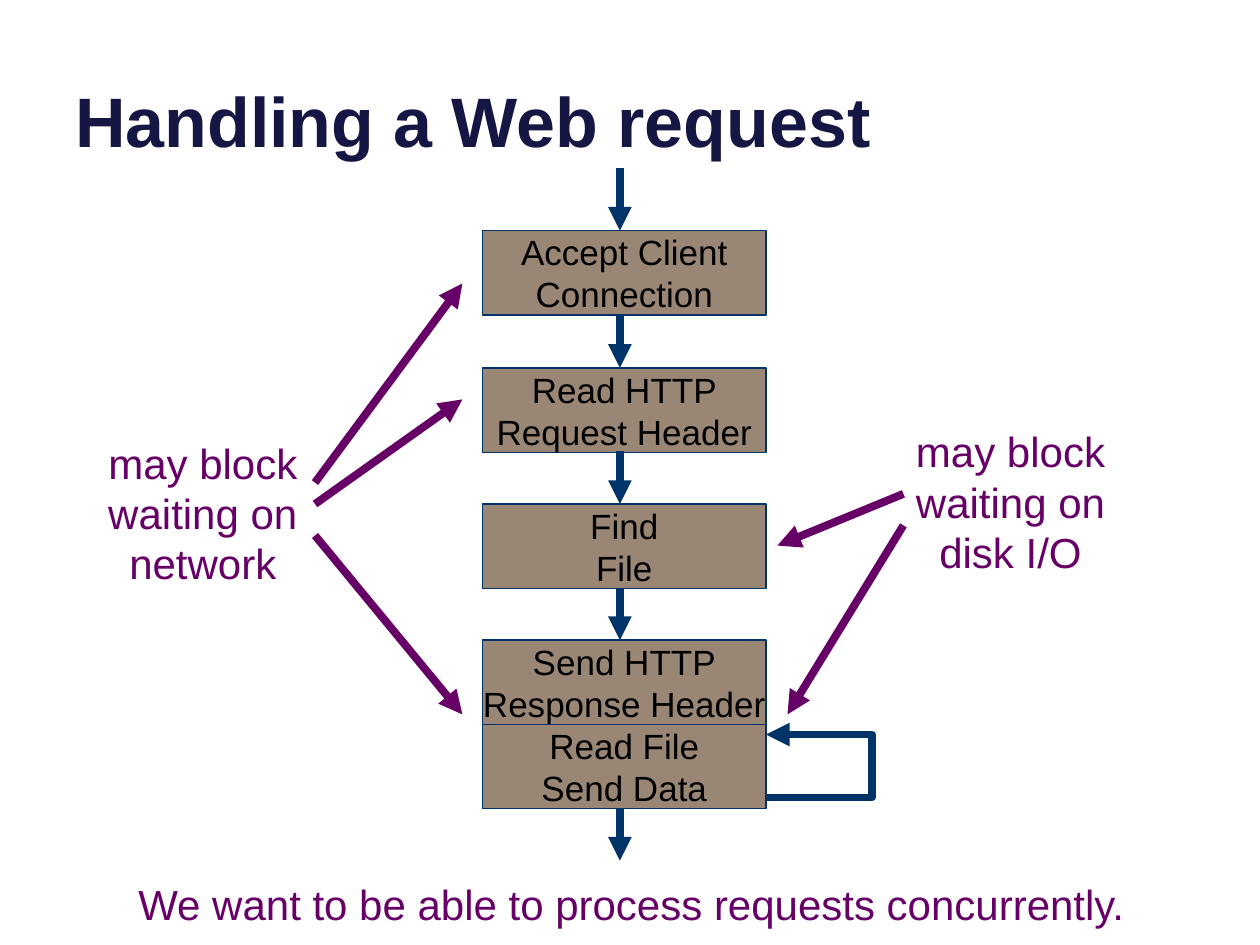
from dataclasses import dataclass

from lxml.etree import SubElement
from pptx import Presentation
from pptx.dml.color import RGBColor
from pptx.enum.shapes import MSO_CONNECTOR, MSO_SHAPE
from pptx.enum.text import MSO_ANCHOR, PP_ALIGN
from pptx.oxml.ns import qn
from pptx.util import Inches, Pt


@dataclass(frozen=True)
class Theme:
    font: str = "Arial"
    title_color: RGBColor = RGBColor(0x16, 0x16, 0x45)
    step_fill: RGBColor = RGBColor(0x99, 0x86, 0x74)
    step_text: RGBColor = RGBColor(0, 0, 0)
    flow: RGBColor = RGBColor(0x00, 0x33, 0x67)
    note: RGBColor = RGBColor(0x66, 0x00, 0x66)
    title_size: Pt = Pt(40)
    note_size: Pt = Pt(24)
    step_size: Pt = Pt(20)
    outline: Pt = Pt(0.75)
    arrow: Pt = Pt(4.5)


THEME = Theme()

STEP_LEFT, STEP_WIDTH, STEP_HEIGHT = 3.83, 2.25, 0.67
FLOW_X = 4.92
STEPS = [
    (1.83, ["Accept Client", "Connection"]),
    (2.92, ["Read HTTP", "Request Header"]),
    (4.0, ["Find", "File"]),
    (5.08, ["Send HTTP", "Response Header"]),
    (5.75, ["Read File", "Send Data"]),
]
FLOW_ARROWS = [(1.33, 1.83), (2.5, 2.92), (3.58, 4), (4.67, 5.08), (6.42, 6.83)]
LOOP = [(6.08, 6.33), (6.92, 6.33), (6.92, 5.83), (6.08, 5.83)]
BLOCKING_ARROWS = [
    ((7.17, 3.92), (6.17, 4.33)),
    ((7.17, 4.17), (6.25, 5.67)),
    ((2.5, 3.83), (3.67, 2.25)),
    ((2.5, 4), (3.67, 3.17)),
    ((2.5, 4.25), (3.67, 5.67)),
]


def write_lines(frame, lines, size, color, align=PP_ALIGN.CENTER, bold=False):
    for index, line in enumerate(lines):
        para = frame.paragraphs[0] if index == 0 else frame.add_paragraph()
        para.text = line
        para.alignment = align
        para.font.name = THEME.font
        para.font.size = size
        para.font.bold = bold
        para.font.color.rgb = color


def add_title(page, text):
    box = page.shapes.add_textbox(Inches(0.5), Inches(-0.37), Inches(9), Inches(1.7))
    frame = box.text_frame
    frame.word_wrap = True
    frame.vertical_anchor = MSO_ANCHOR.BOTTOM
    write_lines(frame, [text], THEME.title_size, THEME.title_color, PP_ALIGN.LEFT, True)


def add_note(page, left, top, width, height, lines, align=PP_ALIGN.CENTER):
    box = page.shapes.add_textbox(Inches(left), Inches(top), Inches(width), Inches(height))
    box.text_frame.word_wrap = False
    write_lines(box.text_frame, lines, THEME.note_size, THEME.note, align)


def add_step(page, top, lines):
    box = page.shapes.add_shape(MSO_SHAPE.RECTANGLE, Inches(STEP_LEFT), Inches(top),
                                Inches(STEP_WIDTH), Inches(STEP_HEIGHT))
    box.shadow.inherit = False
    box.fill.solid()
    box.fill.fore_color.rgb = THEME.step_fill
    box.line.color.rgb = THEME.flow
    box.line.width = THEME.outline
    frame = box.text_frame
    frame.word_wrap = False
    frame.vertical_anchor = MSO_ANCHOR.MIDDLE
    write_lines(frame, lines, THEME.step_size, THEME.step_text)


def style_arrow(shape, color):
    """Give a line its colour and width, and an arrowhead at its end."""
    shape.line.color.rgb = color
    shape.line.width = THEME.arrow
    SubElement(shape.line._get_or_add_ln(), qn("a:tailEnd"), type="triangle")


def add_arrow(page, start, end, color):
    points = [Inches(value) for value in (*start, *end)]
    arrow = page.shapes.add_connector(MSO_CONNECTOR.STRAIGHT, *points)
    style_arrow(arrow, color)
    SubElement(arrow._element.spPr, qn("a:effectLst"))


def add_loop(page, points):
    corners = [(Inches(x), Inches(y)) for x, y in points]
    builder = page.shapes.build_freeform(*corners[0])
    builder.add_line_segments(corners[1:], close=False)
    loop = builder.convert_to_shape()
    loop.shadow.inherit = False
    loop.fill.background()
    style_arrow(loop, THEME.flow)


def main():
    deck = Presentation()
    deck.slide_width, deck.slide_height = Inches(10), Inches(7.5)
    page = deck.slides.add_slide(deck.slide_layouts[6])

    add_title(page, "Handling a Web request")
    for top, lines in STEPS:
        add_step(page, top, lines)
    for top, bottom in FLOW_ARROWS:
        add_arrow(page, (FLOW_X, top), (FLOW_X, bottom), THEME.flow)
    add_loop(page, LOOP)
    for start, end in BLOCKING_ARROWS:
        add_arrow(page, start, end, THEME.note)

    add_note(page, 7.17, 3.33, 1.7, 1.3, ["may block", "waiting on", "disk I/O"])
    add_note(page, 1, 6.92, 8.1, 0.5,
             ["We want to be able to process requests concurrently."], PP_ALIGN.LEFT)
    add_note(page, 0.76, 3.42, 1.7, 1.3, ["may block", "waiting on", "network"])
    deck.save("out.pptx")


if __name__ == "__main__":
    main()
